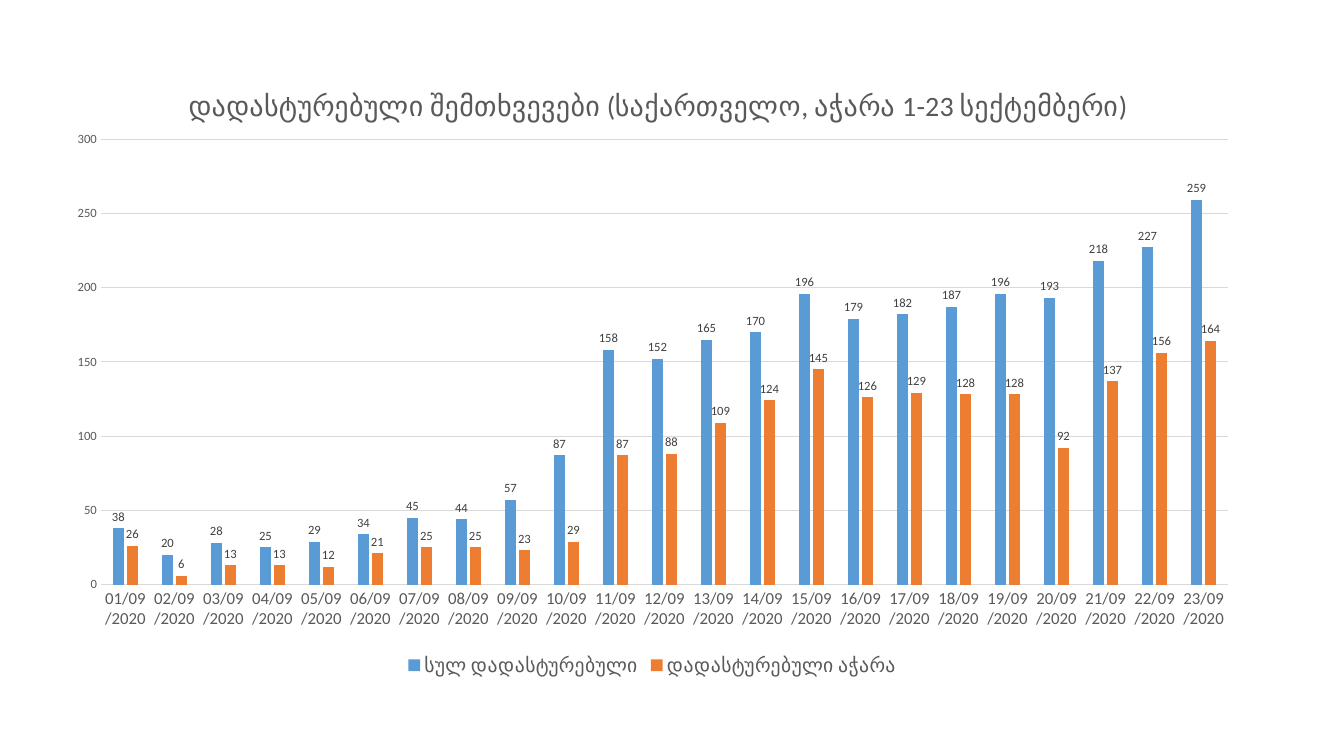
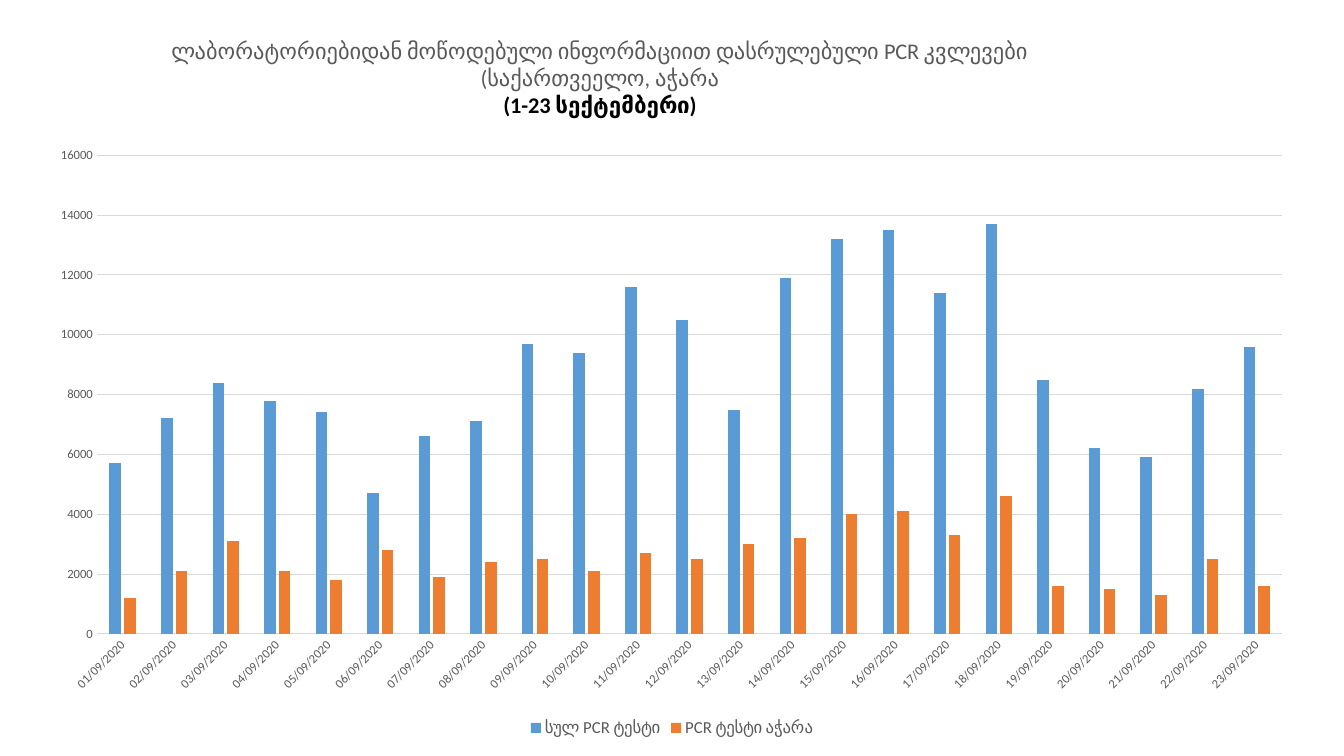
import pptx
import pptx.chart.data
import pptx.dml.color
import pptx.enum.chart
import pptx.oxml
import pptx.oxml.ns
import pptx.util
from pptx.util import Inches

FONT = "Calibri"
BLACK, GREY, LABEL_GREY, GRID = "000000", "595959", "404040", "D9D9D9"
SERIES_COLOURS = ("5B9BD5", "ED7D31")
DATES = [f"{day:02}/09/2020" for day in range(1, 24)]

# Frames are (left, top, width, height) in inches on the slide.
CHARTS = [
    {
        "frame": (0.53, 0.57, 11.88, 6.19),
        "plot": (1.0, 1.38, 11.18, 4.42),
        "title_at": (1.82, 0.8),
        "title": [("დადასტურებული შემთხვევები (საქართველო, აჭარა 1-23 სექტემბერი)", GREY, False)],
        "sizes": {"title": 20, "dates": 12, "legend": 14},
        "date_angle": 0,
        "scale": (300, 50),
        "labels": True,
        "series": [
            ("სულ დადასტურებული",
             [38, 20, 28, 25, 29, 34, 45, 44, 57, 87, 158, 152, 165, 170, 196, 179,
              182, 187, 196, 193, 218, 227, 259]),
            ("დადასტურებული აჭარა",
             [26, 6, 13, 13, 12, 21, 25, 25, 23, 29, 87, 88, 109, 124, 145, 126,
              129, 128, 128, 92, 137, 156, 164]),
        ],
    },
    {
        "frame": (0.36, 0.22, 12.61, 7.14),
        "plot": (0.96, 1.54, 11.76, 4.75),
        "title_at": (1.67, 0.33),
        "title": [
            ("ლაბორატორიებიდან მოწოდებული ინფორმაციით დასრულებული PCR კვლევები "
             "(საქართვეელო, აჭარა", GREY, False),
            ("(1-23 სექტემბერი)", BLACK, True),
        ],
        "sizes": {"title": 16, "dates": 9, "legend": 12},
        "date_angle": -45,
        "scale": (16000, 2000),
        "labels": False,
        "series": [
            ("სულ PCR ტესტი",
             [5700, 7200, 8400, 7800, 7400, 4700, 6600, 7100, 9700, 9400, 11600, 10500,
              7500, 11900, 13200, 13500, 11400, 13700, 8500, 6200, 5900, 8200, 9600]),
            ("PCR ტესტი აჭარა",
             [1200, 2100, 3100, 2100, 1800, 2800, 1900, 2400, 2500, 2100, 2700, 2500,
              3000, 3200, 4000, 4100, 3300, 4600, 1600, 1500, 1300, 2500, 1600]),
        ],
    },
]


def colour(value):
    return pptx.dml.color.RGBColor.from_string(value)


def style_font(font, size, value, bold=False):
    font.name = FONT
    font.size = pptx.util.Pt(size)
    font.bold = bold
    font.color.rgb = colour(value)


def style_line(line):
    line.color.rgb = colour(GRID)
    line.width = pptx.util.Pt(0.75)


def place(element, after, frame, at, inner=False):
    """Give a chart part a fixed place, as fractions of the chart frame."""
    left, top, width, height = frame
    parts = [("x", (at[0] - left) / width), ("y", (at[1] - top) / height)]
    if len(at) == 4:
        parts += [("w", at[2] / width), ("h", at[3] / height)]
    target = '<c:layoutTarget val="inner"/>' if inner else ""
    modes = '<c:xMode val="edge"/><c:yMode val="edge"/>'
    values = "".join(f'<c:{name} val="{value:.4f}"/>' for name, value in parts)
    for old in element.findall(pptx.oxml.ns.qn("c:layout")):
        element.remove(old)
    layout = pptx.oxml.parse_xml(
        f'<c:layout {pptx.oxml.ns.nsdecls("c")}><c:manualLayout>'
        f"{target}{modes}{values}</c:manualLayout></c:layout>")
    if after is None:
        element.insert(0, layout)
    else:
        after.addnext(layout)


def add_title(chart, content):
    chart.has_title = True
    title = chart.chart_title
    title.include_in_layout = False
    frame = title.text_frame
    for index, (text, value, bold) in enumerate(content["title"]):
        para = frame.paragraphs[0] if index == 0 else frame.add_paragraph()
        span = para.add_run()
        span.text = text
        style_font(span.font, content["sizes"]["title"], value, bold)
    element = frame._txBody.getparent().getparent()
    place(element, element.find(pptx.oxml.ns.qn("c:tx")), content["frame"], content["title_at"])


def style_axes(chart, content):
    ticks = pptx.enum.chart.XL_TICK_MARK
    dates, values = chart.category_axis, chart.value_axis
    for axis, size in ((dates, content["sizes"]["dates"]), (values, 9)):
        axis.major_tick_mark = axis.minor_tick_mark = ticks.NONE
        style_font(axis.tick_labels.font, size, GREY)
    style_line(dates.format.line)
    body = dates._element.find(pptx.oxml.ns.qn("c:txPr")).find(pptx.oxml.ns.qn("a:bodyPr"))
    body.set("rot", str(content["date_angle"] * 60000))
    values.format.line.fill.background()
    values.has_major_gridlines = True
    style_line(values.major_gridlines.format.line)
    values.minimum_scale = 0
    values.maximum_scale, values.major_unit = content["scale"]
    values.tick_labels.number_format = "0"
    values.tick_labels.number_format_is_linked = False


def style_columns(plot, with_labels):
    plot.gap_width = 219
    plot.overlap = -27
    plot.vary_by_categories = False
    for series, value in zip(plot.series, SERIES_COLOURS):
        series.format.fill.solid()
        series.format.fill.fore_color.rgb = colour(value)
        if with_labels:
            labels = series.data_labels
            labels.show_value = True
            labels.position = pptx.enum.chart.XL_LABEL_POSITION.OUTSIDE_END
            style_font(labels.font, 9, LABEL_GREY)


def add_chart_slide(deck, content):
    page = deck.slides.add_slide(deck.slide_layouts[6])
    data = pptx.chart.data.CategoryChartData()
    data.categories = DATES
    for name, values in content["series"]:
        data.add_series(name, values)
    chart = page.shapes.add_chart(
        pptx.enum.chart.XL_CHART_TYPE.COLUMN_CLUSTERED,
        *map(Inches, content["frame"]), data).chart
    style_font(chart.font, 10, BLACK)
    add_title(chart, content)
    style_axes(chart, content)
    style_columns(chart.plots[0], content["labels"])
    chart.has_legend = True
    chart.legend.position = pptx.enum.chart.XL_LEGEND_POSITION.BOTTOM
    chart.legend.include_in_layout = False
    style_font(chart.legend.font, content["sizes"]["legend"], GREY)
    plot_area = chart._chartSpace.chart.plotArea
    place(plot_area, None, content["frame"], content["plot"], inner=True)


def main():
    deck = pptx.Presentation()
    deck.slide_width, deck.slide_height = Inches(13.33), Inches(7.5)
    for content in CHARTS:
        add_chart_slide(deck, content)
    deck.save("out.pptx")


if __name__ == "__main__":
    main()
